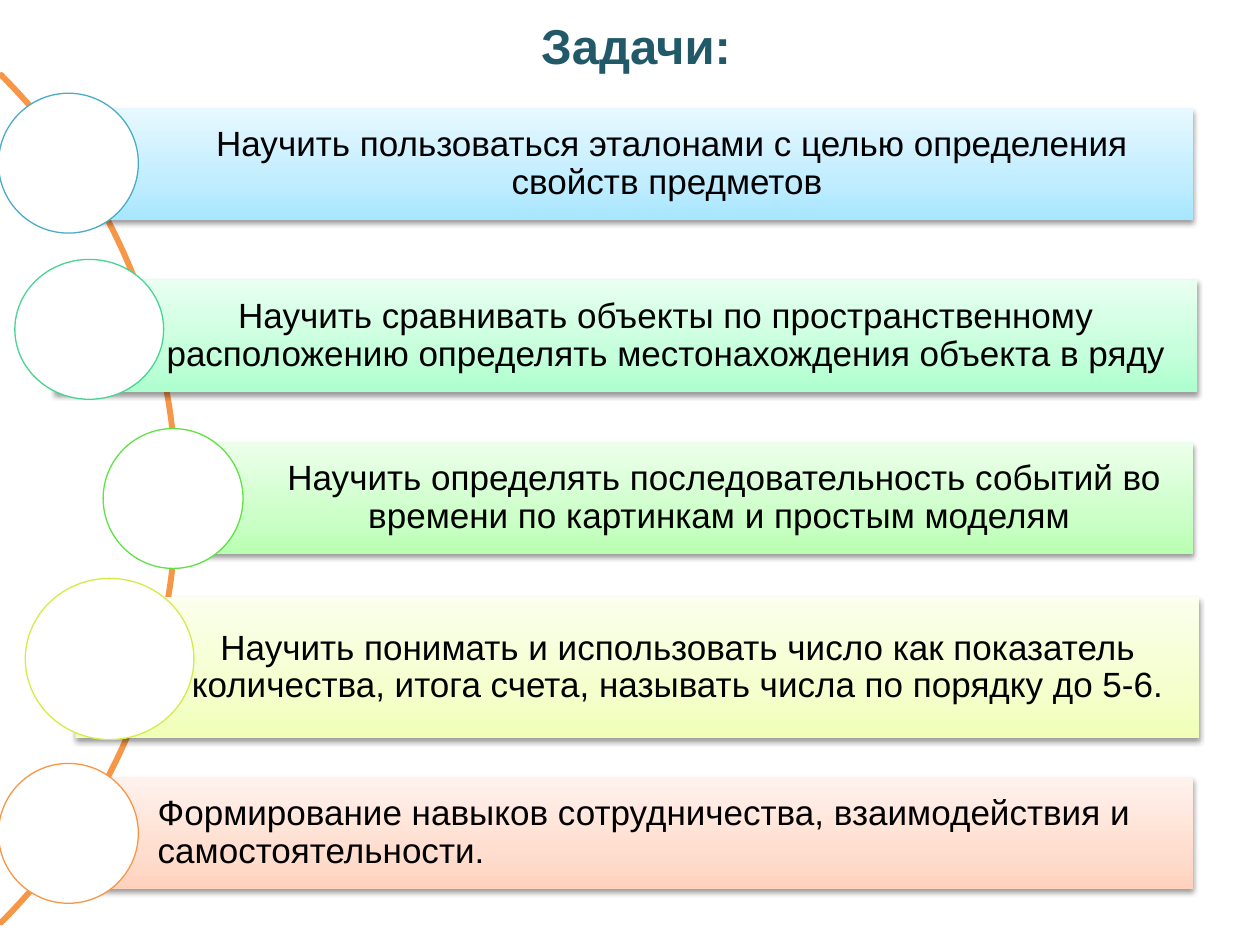
from copy import deepcopy

from lxml import etree
from pptx import Presentation
from pptx.dml.color import RGBColor
from pptx.enum.shapes import MSO_SHAPE as SHAPE
from pptx.enum.text import MSO_ANCHOR as ANCHOR, PP_ALIGN as ALIGN
from pptx.oxml.ns import qn
from pptx.util import Cm, Pt

FONT = "Arial"
BAR_H = 2.26
CIRCLE = 2.82

# text, alignment, bar box, circle box (cm), gradient from bottom to top, outline
TASKS = [
    ("Научить пользоваться эталонами с целью определения свойств предметов ",
     ALIGN.CENTER, (1.4, 2.18, 22.66, BAR_H), (-0.03, 1.88, CIRCLE, CIRCLE),
     ("A7E6FF", "C1EDFF", "E7F8FF"), "4BACC6"),
    ("Научить сравнивать объекты по пространственному расположению "
     "определять местонахождения объекта в ряду",
     ALIGN.CENTER, (1.09, 5.64, 23.04, BAR_H), (0.3, 5.23, 3, CIRCLE),
     ("ADFFCD", "C5FFDB", "E9FFF1"), "48D491"),
    ("Научить определять последовательность событий во времени "
     "по картинкам и простым моделям ",
     ALIGN.CENTER, (3.51, 8.92, 20.55, BAR_H), (2.08, 8.64, CIRCLE, CIRCLE),
     ("B9FFB2", "CDFFC9", "ECFFEA"), "60E146"),
    ("Научить понимать и использовать число как показатель количества, "
     "итога счета, называть числа по порядку до 5-6.",
     ALIGN.CENTER, (1.52, 12.04, 22.66, 2.84), (0.51, 11.66, 3.4, 3.25),
     ("F0FFB8", "F4FFCD", "FBFFEC"), "D5EC46"),
    ("Формирование навыков сотрудничества, взаимодействия и "
     "самостоятельности.",
     ALIGN.LEFT, (1.4, 15.67, 22.66, BAR_H), (-0.03, 15.39, CIRCLE, CIRCLE),
     ("FFD2BD", "FFDED0", "FFF2ED"), "F79646"),
]


def rgb(value):
    return RGBColor.from_string(value)


def add_shape(slide, kind, box):
    sp = slide.shapes.add_shape(kind, *map(Cm, box))
    sp.shadow.inherit = False
    return sp


def set_text(sp, text, align, size, color, bold=False):
    tf = sp.text_frame
    tf.word_wrap = True
    tf.vertical_anchor = ANCHOR.MIDDLE
    p = tf.paragraphs[0]
    p.text = text
    p.alignment = align
    font = p.runs[0].font
    font.name, font.size, font.bold = FONT, Pt(size), bold
    font.color.rgb = rgb(color)
    return tf


def set_gradient(sp, colors):
    sp.fill.gradient()
    sp.fill.gradient_angle = 90
    stops = next(sp._element.spPr.iter(qn("a:gsLst")))
    stops.insert(1, deepcopy(stops[0]))
    for stop, color, position in zip(sp.fill.gradient_stops, colors, (0, 0.35, 1)):
        stop.color.rgb = rgb(color)
        stop.position = position


def add_drop_shadow(sp):
    effects = sp._element.spPr.find(qn("a:effectLst"))
    shadow = etree.SubElement(effects, qn("a:outerShdw"), blurRad="40000",
                              dist="20000", dir="5400000", rotWithShape="0")
    color = etree.SubElement(shadow, qn("a:srgbClr"), val="000000")
    etree.SubElement(color, qn("a:alpha"), val="38000")


def add_title(slide, box):
    sp = slide.shapes.add_textbox(*map(Cm, box))
    set_text(sp, "Задачи: ", ALIGN.CENTER, 28, "215968", bold=True)


def add_arc(slide, box):
    sp = add_shape(slide, SHAPE.BLOCK_ARC, box)
    for i, value in enumerate((189, 27, 0.002)):
        sp.adjustments[i] = value
    sp.fill.background()
    sp.line.color.rgb = rgb("F79646")
    sp.line.width = Pt(2)


def add_task(slide, text, align, bar_box, circle_box, colors, outline):
    # Bar with the task
    bar = add_shape(slide, SHAPE.RECTANGLE, bar_box)
    set_gradient(bar, colors)
    bar.line.fill.background()
    add_drop_shadow(bar)
    tf = set_text(bar, text, align, 20, "000000")
    tf.margin_left = Cm(1.78)
    tf.margin_top = tf.margin_right = tf.margin_bottom = Cm(0.15)
    tf.paragraphs[0].line_spacing = 0.9

    # Circle on the arc
    circle = add_shape(slide, SHAPE.OVAL, circle_box)
    circle.fill.solid()
    circle.fill.fore_color.rgb = rgb("FFFFFF")
    circle.line.color.rgb = rgb(outline)
    circle.line.width = Pt(0.75)


def main():
    prs = Presentation()
    prs.slide_width, prs.slide_height = Cm(25.4), Cm(19.05)
    slide = prs.slides.add_slide(prs.slide_layouts[6])
    add_title(slide, (0.3, 0.28, 25.32, 1.27))
    add_arc(slide, (-20.65, -2.06, 24.23, 24.23))
    for task in TASKS:
        add_task(slide, *task)
    prs.save("out.pptx")


if __name__ == "__main__":
    main()
